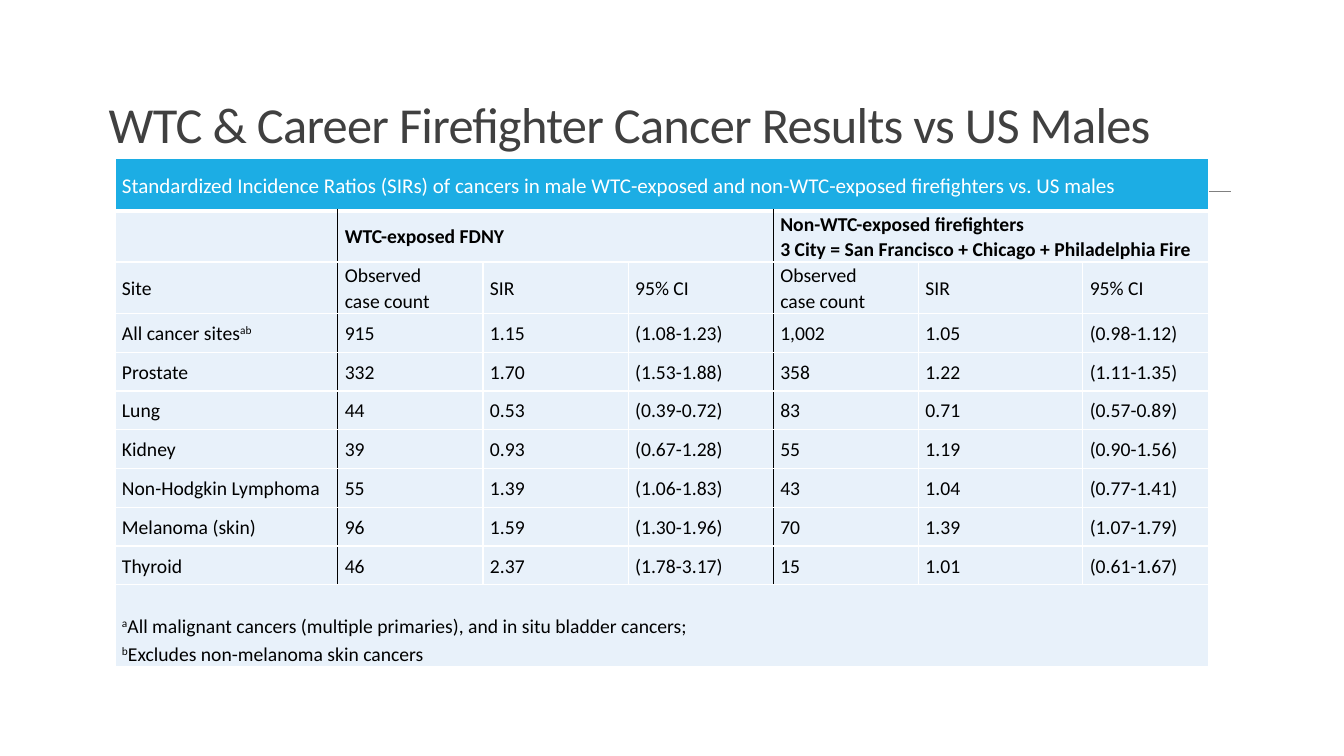
from lxml.etree import SubElement
from pptx import Presentation
from pptx.dml.color import RGBColor
from pptx.enum.shapes import MSO_CONNECTOR
from pptx.enum.text import MSO_ANCHOR
from pptx.oxml.ns import qn
from pptx.util import Inches, Pt

FONT = "Calibri"
WHITE, BLACK, BLUE, PALE = "FFFFFF", "000000", "1CADE4", "E8F1FA"

COLUMN_WIDTHS = [2.21, 1.44, 1.44, 1.44, 1.44, 1.63, 1.25]
ROW_HEIGHTS = [0.52, 0.51, 0.51] + [0.385] * 7 + [0.81]
GROUP_STARTS = (1, 4)

CAPTION = ("Standardized Incidence Ratios (SIRs) of cancers in male "
           "WTC-exposed and non-WTC-exposed firefighters vs. US males")
GROUPS = ["WTC-exposed FDNY",
          "Non-WTC-exposed firefighters\n"
          "3 City = San Francisco + Chicago + Philadelphia Fire"]
MEASURES = ["Observed\ncase count", "SIR", "95% CI"]
RESULTS = [
    ["Site"] + MEASURES * 2,
    ["All cancer sites^ab", "915", "1.15", "(1.08-1.23)", "1,002", "1.05", "(0.98-1.12)"],
    ["Prostate", "332", "1.70", "(1.53-1.88)", "358", "1.22", "(1.11-1.35)"],
    ["Lung", "44", "0.53", "(0.39-0.72)", "83", "0.71", "(0.57-0.89)"],
    ["Kidney", "39", "0.93", "(0.67-1.28)", "55", "1.19", "(0.90-1.56)"],
    ["Non-Hodgkin Lymphoma", "55", "1.39", "(1.06-1.83)", "43", "1.04", "(0.77-1.41)"],
    ["Melanoma (skin)", "96", "1.59", "(1.30-1.96)", "70", "1.39", "(1.07-1.79)"],
    ["Thyroid", "46", "2.37", "(1.78-3.17)", "15", "1.01", "(0.61-1.67)"],
]
FOOTNOTES = ("^a^All malignant cancers (multiple primaries), and in situ bladder cancers;\n"
             "^b^Excludes non-melanoma skin cancers")


def rgb(color):
    return RGBColor.from_string(color)


def write(frame, text, size, color, line_spacing, bold=False):
    """Write one paragraph per line; text between ^ marks is superscript."""
    for index, line in enumerate(text.split("\n")):
        paragraph = frame.paragraphs[0] if index == 0 else frame.add_paragraph()
        paragraph.line_spacing = line_spacing
        paragraph.font.name = FONT
        paragraph.font.size = Pt(size)
        paragraph.font.bold = bold
        paragraph.font.color.rgb = rgb(color)
        for position, part in enumerate(line.split("^")):
            if part:
                run = paragraph.add_run()
                run.text = part
                if position % 2:
                    run.font._element.set("baseline", "30000")


def add_rule(slide):
    rule = slide.shapes.add_connector(
        MSO_CONNECTOR.STRAIGHT, Inches(1.31), Inches(1.9), Inches(12.21), Inches(1.9))
    rule.line.color.rgb = rgb("808080")
    rule.line.width = Pt(0.5)
    SubElement(rule._element.spPr, qn("a:effectLst"))


def add_title(slide, text):
    title = slide.shapes.add_textbox(Inches(0.98), Inches(0.12), Inches(11.69), Inches(1.45))
    frame = title.text_frame
    frame.word_wrap = True
    frame.vertical_anchor = MSO_ANCHOR.BOTTOM
    write(frame, text, 36, "404040", 0.85)
    frame.paragraphs[0].runs[0].font._element.set("spc", "-50")


def set_border(cell, side, color, width=1):
    line = SubElement(cell._tc.get_or_add_tcPr(), qn(f"a:ln{side}"), w=str(Pt(width)))
    fill = SubElement(line, qn("a:solidFill"))
    SubElement(fill, qn("a:srgbClr"), val=color)


def fill_cell(table, row, column, text, span=1, fill=PALE, color=BLACK, size=14,
              line_spacing=1.07, bold=False, anchor=MSO_ANCHOR.MIDDLE,
              grouped=True, bottom_width=1):
    """Fill one cell; grouped cells get a black line where a column group starts."""
    cell = table.cell(row, column)
    if span > 1:
        cell.merge(table.cell(row, column + span - 1))
    for side, edge in (("L", column), ("R", column + span)):
        set_border(cell, side, BLACK if grouped and edge in GROUP_STARTS else WHITE)
    set_border(cell, "T", WHITE)
    set_border(cell, "B", WHITE, bottom_width)
    cell.fill.solid()
    cell.fill.fore_color.rgb = rgb(fill)
    cell.margin_left = cell.margin_right = Inches(0.07)
    cell.margin_top = cell.margin_bottom = 0
    cell.vertical_anchor = anchor
    write(cell.text_frame, text, size, color, line_spacing, bold)


def add_results_table(slide):
    rows, columns = len(ROW_HEIGHTS), len(COLUMN_WIDTHS)
    table = slide.shapes.add_table(
        rows, columns, Inches(1.14), Inches(1.57),
        Inches(sum(COLUMN_WIDTHS)), Inches(sum(ROW_HEIGHTS))).table
    for column, width in zip(table.columns, COLUMN_WIDTHS):
        column.width = Inches(width)
    for row, height in zip(table.rows, ROW_HEIGHTS):
        row.height = Inches(height)

    fill_cell(table, 0, 0, CAPTION, span=columns, fill=BLUE, color=WHITE, size=15,
              line_spacing=1.15, grouped=False, bottom_width=3)
    fill_cell(table, 1, 0, "")
    for start, group in zip(GROUP_STARTS, GROUPS):
        fill_cell(table, 1, start, group, span=len(MEASURES), bold=True)
    for row, values in enumerate(RESULTS, start=2):
        for column, value in enumerate(values):
            fill_cell(table, row, column, value)
    fill_cell(table, rows - 1, 0, FOOTNOTES, span=columns, line_spacing=1.15,
              anchor=MSO_ANCHOR.BOTTOM, grouped=False)


def main():
    presentation = Presentation()
    presentation.slide_width = Inches(13.33)
    presentation.slide_height = Inches(7.5)
    slide = presentation.slides.add_slide(presentation.slide_layouts[6])
    add_rule(slide)
    add_title(slide, "WTC & Career Firefighter Cancer Results vs US Males")
    add_results_table(slide)
    presentation.save("out.pptx")


if __name__ == "__main__":
    main()
